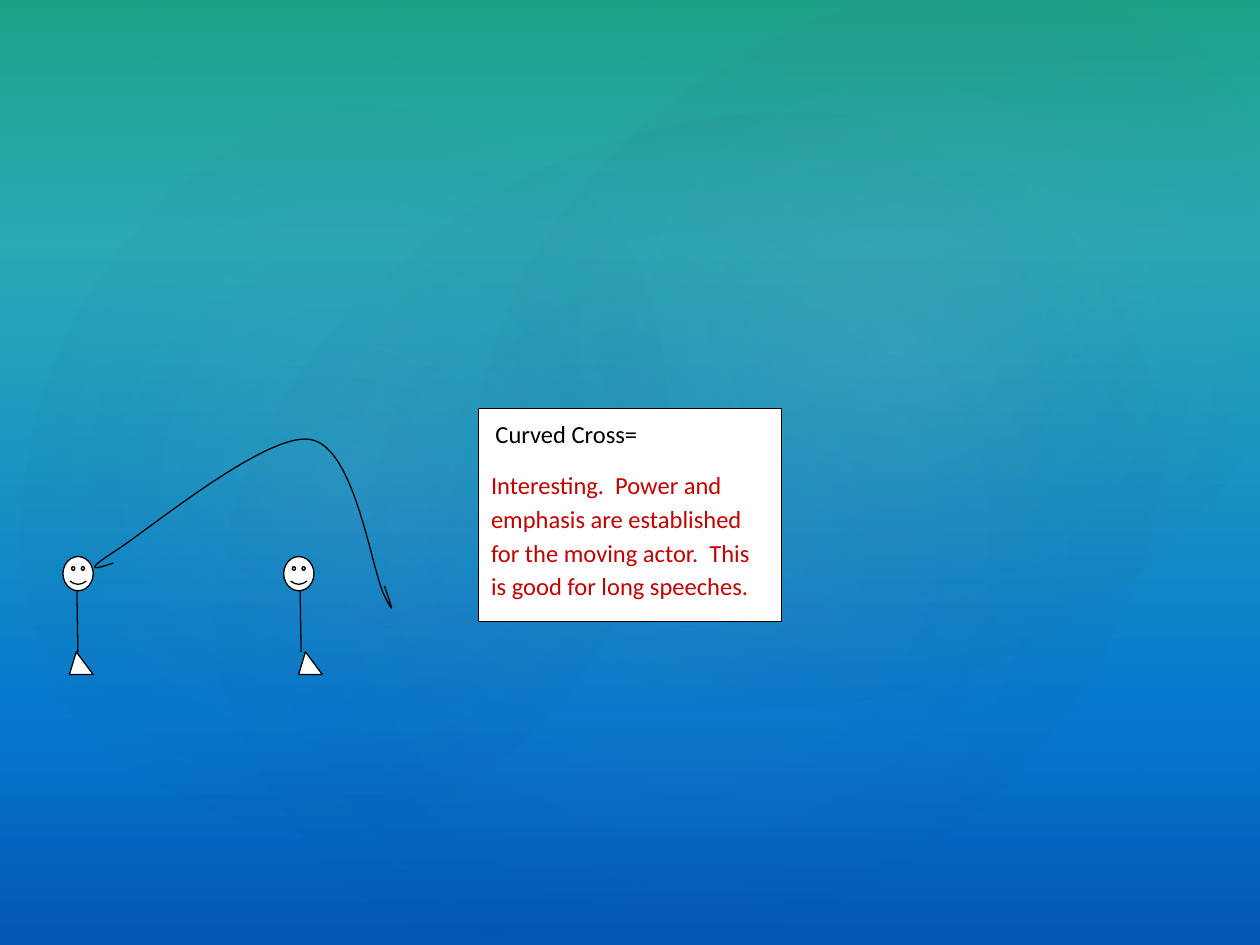
import lxml.etree
import pptx
import pptx.dml.color
import pptx.enum.shapes
import pptx.enum.text
import pptx.oxml.ns
import pptx.util

Cm = pptx.util.Cm
Pt = pptx.util.Pt
RGBColor = pptx.dml.color.RGBColor
SHAPE = pptx.enum.shapes.MSO_SHAPE
qn = pptx.oxml.ns.qn
SubElement = lxml.etree.SubElement

BLACK = RGBColor(0x00, 0x00, 0x00)
WHITE = RGBColor(0xFF, 0xFF, 0xFF)
RED = RGBColor(0xC0, 0x00, 0x00)
GREEN = RGBColor(0x03, 0xD4, 0xA8)
TURQUOISE = RGBColor(0x21, 0xD6, 0xE0)
BLUE = RGBColor(0x00, 0x87, 0xE6)
DEEP_BLUE = RGBColor(0x00, 0x5C, 0xBF)
DUSK = RGBColor(0x50, 0x46, 0x52)
NAVY = RGBColor(0x24, 0x28, 0x52)
MIST = RGBColor(0xC4, 0xBC, 0xC6)


def set_gradient(fill, element, stops, circular=False):
    """Fill with (position %, colour, opacity %) stops, downwards or from the centre."""
    fill.gradient()
    gradient = element.find(".//" + qn("a:gradFill"))
    for child in list(gradient):
        gradient.remove(child)
    stop_list = SubElement(gradient, qn("a:gsLst"))
    for position, color, opacity in stops:
        stop = SubElement(stop_list, qn("a:gs"), pos=str(position * 1000))
        color_element = SubElement(stop, qn("a:srgbClr"), val=str(color))
        if opacity < 100:
            SubElement(color_element, qn("a:alpha"), val=str(opacity * 1000))
    if circular:
        center = SubElement(gradient, qn("a:path"), {"path": "circle"})
        SubElement(center, qn("a:fillToRect"), dict.fromkeys("ltrb", "50000"))
    else:
        SubElement(gradient, qn("a:lin"), ang="5400000", scaled="0")


def add_outlined(kind, left, top, width, height):
    shape = slide.shapes.add_shape(kind, Cm(left), Cm(top), Cm(width), Cm(height))
    shape.shadow.inherit = False
    shape.fill.solid()
    shape.fill.fore_color.rgb = WHITE
    shape.line.color.rgb = BLACK
    shape.line.width = Pt(0.75)
    return shape


presentation = pptx.Presentation()
presentation.slide_width = Cm(25.4)
presentation.slide_height = Cm(19.05)
slide = presentation.slides.add_slide(presentation.slide_layouts[6])

# Background with a tint and three soft glows
set_gradient(slide.background.fill, slide.element,
             [(0, GREEN, 100), (25, TURQUOISE, 100), (75, BLUE, 100), (100, DEEP_BLUE, 100)])
tint = add_outlined(SHAPE.RECTANGLE, 0, 0, 25.4, 19.05)
tint.line.fill.background()
set_gradient(tint.fill, tint.element, [(0, DUSK, 36), (100, NAVY, 10)])

glows = [
    (3.81, 2.9, 20.12, 15.85, 328.7, 7),
    (-0.76, 3.25, 15.39, 12.45, 294.3, 8),
    (9.09, 0.33, 18.01, 13.21, 328.7, 8),
]
for left, top, width, height, rotation, opacity in glows:
    glow = add_outlined(SHAPE.OVAL, left, top, width, height)
    glow.rotation = rotation
    glow.line.fill.background()
    set_gradient(glow.fill, glow.element, [(0, MIST, opacity), (58, NAVY, 0)], circular=True)

# Explanation
box = add_outlined(SHAPE.RECTANGLE, 9.65, 8.23, 6.1, 4.3)
text_frame = box.text_frame
text_frame.word_wrap = True
text_frame.vertical_anchor = pptx.enum.text.MSO_ANCHOR.TOP
explanation = [
    [(" ", 11, WHITE), ("Curved Cross=", 14, BLACK)],
    [("Interesting.  Power and emphasis are established for the moving actor.  "
      "This is good for long speeches.", 14, RED)],
]
for index, runs in enumerate(explanation):
    paragraph = text_frame.add_paragraph() if index else text_frame.paragraphs[0]
    paragraph.alignment = pptx.enum.text.PP_ALIGN.LEFT
    paragraph.line_spacing = 1.15
    paragraph.space_after = Pt(10)
    for text, size, color in runs:
        run = paragraph.add_run()
        run.text = text
        run.font.name = "Calibri"
        run.font.size = Pt(size)
        run.font.color.rgb = color

# Two actors: left edges of head, body and foot
for head_left, body_left, foot_left in [(1.27, 1.55, 1.4), (5.72, 6.05, 6.02)]:
    head = add_outlined(SHAPE.SMILEY_FACE, head_left, 11.22, 0.61, 0.69)
    head.adjustments[0] = 0.047
    body = slide.shapes.add_connector(
        pptx.enum.shapes.MSO_CONNECTOR.STRAIGHT,
        Cm(body_left), Cm(11.91), Cm(body_left + 0.02), Cm(13.14))
    body.line.color.rgb = BLACK
    body.line.width = Pt(0.75)
    SubElement(body.element.spPr, qn("a:effectLst"))
    foot = add_outlined(SHAPE.ISOSCELES_TRIANGLE, foot_left, 13.14, 0.48, 0.46)
    foot.adjustments[0] = 0.288

# Curved walking route: a start point, then three control points per curve
route_points = [
    (2.29, 11.35),
    (1.96, 11.46), (1.63, 11.56), (2.29, 11.13),
    (2.95, 10.72), (5.36, 8.71), (6.25, 8.86),
    (7.16, 8.99), (7.49, 11.51), (7.75, 12.01),
    (8.0, 12.5), (7.87, 12.17), (7.75, 11.81),
]
start, *controls = [(Cm(x), Cm(y)) for x, y in route_points]
builder = slide.shapes.build_freeform(*start)
builder.add_line_segments(controls, close=False)
route = builder.convert_to_shape()
route.shadow.inherit = False
route.fill.background()
route.line.color.rgb = BLACK
route.line.width = Pt(0.75)
outline = route.element.find(".//" + qn("a:path"))
segments = outline.findall(qn("a:lnTo"))
for first in range(0, len(segments), 3):
    curve = SubElement(outline, qn("a:cubicBezTo"))
    for segment in segments[first:first + 3]:
        curve.append(segment[0])
        outline.remove(segment)

presentation.save("out.pptx")
